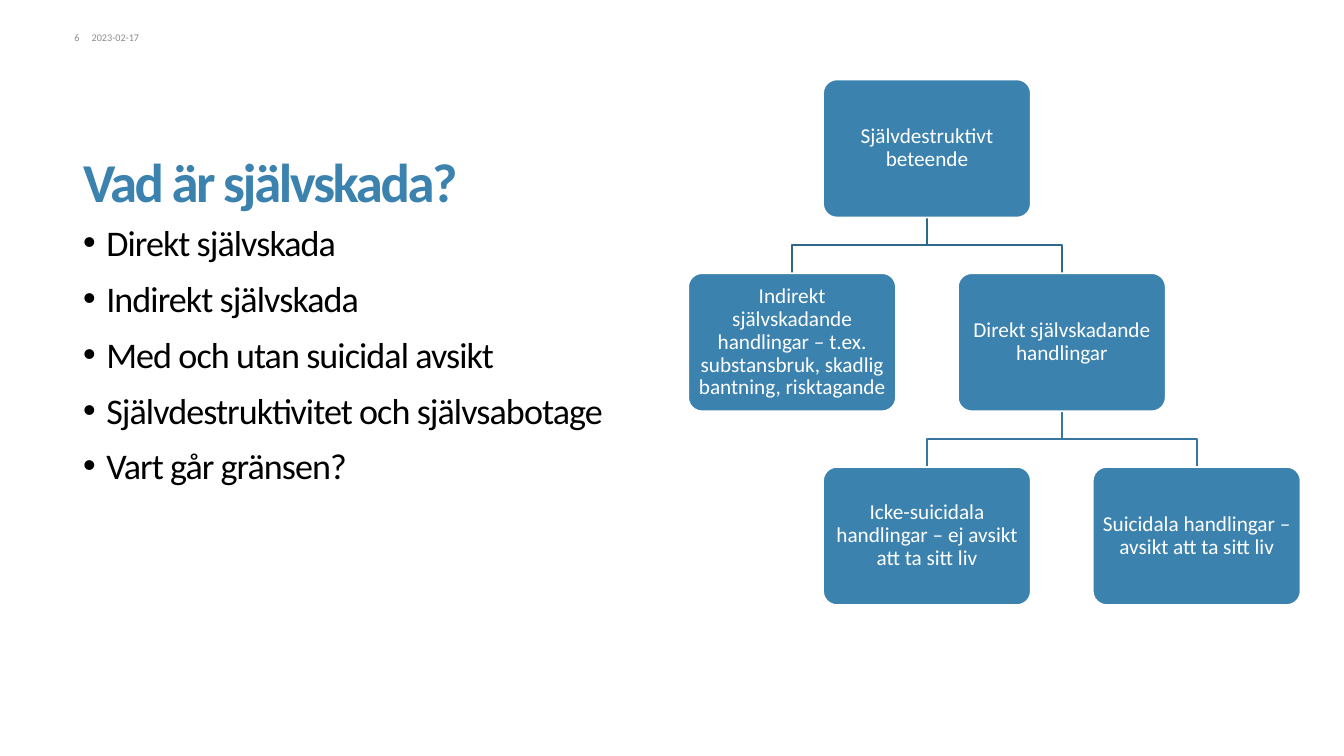
import dataclasses

import lxml.etree
import pptx
import pptx.dml.color
import pptx.enum.shapes
import pptx.enum.text
import pptx.oxml.ns
import pptx.util

Inches = pptx.util.Inches
Pt = pptx.util.Pt
Align = pptx.enum.text.PP_ALIGN
Anchor = pptx.enum.text.MSO_ANCHOR


@dataclasses.dataclass(frozen=True)
class Theme:
    """Colours, font and type sizes of the slide."""
    font: str = "Calibri"
    blue: str = "3C82AF"
    upper_link: str = "30688C"
    lower_link: str = "36769F"
    white: str = "FFFFFF"
    black: str = "000000"
    grey: str = "8C8C8C"
    title_size: float = 64.5
    body_size: float = 42.5
    node_size: float = 25
    meta_size: float = 12


THEME = Theme()
QUESTIONS = [
    "Direkt självskada",
    "Indirekt självskada",
    "Med och utan suicidal avsikt",
    "Självdestruktivitet och självsabotage",
    "Vart går gränsen?",
]
BEHAVIOURS = {
    "root": (1, 0, "Självdestruktivt beteende"),
    "indirect": (0, 1, "Indirekt självskadande handlingar – t.ex. substansbruk, "
                       "skadlig bantning, risktagande"),
    "direct": (2, 1, "Direkt självskadande handlingar"),
    "non_suicidal": (1, 2, "Icke-suicidala handlingar – ej avsikt att ta sitt liv"),
    "suicidal": (3, 2, "Suicidala handlingar – avsikt att ta sitt liv"),
}
LINKS = [
    ("root", "indirect", THEME.upper_link),
    ("root", "direct", THEME.upper_link),
    ("direct", "non_suicidal", THEME.lower_link),
    ("direct", "suicidal", THEME.lower_link),
]


def rgb(colour):
    """Return a colour object for a hex string."""
    return pptx.dml.color.RGBColor.from_string(colour)


def place(shape, box):
    """Move and size a shape to a box given in inches."""
    shape.left, shape.top, shape.width, shape.height = map(Inches, box)


def prepare_frame(frame, anchor, insets=(0, 0, 0, 0), wrap=True):
    """Set anchor, margins and wrapping of a text frame."""
    frame.auto_size = pptx.enum.text.MSO_AUTO_SIZE.NONE
    frame.word_wrap = wrap
    frame.vertical_anchor = anchor
    (frame.margin_left, frame.margin_top,
     frame.margin_right, frame.margin_bottom) = map(Inches, insets)


def format_paragraph(paragraph, size, colour, align=Align.LEFT, line=1.0,
                     after=0, bold=False, tracking=0):
    """Format one paragraph and its runs."""
    paragraph.alignment = align
    paragraph.line_spacing = line
    paragraph.space_before = Pt(0)
    paragraph.space_after = Pt(after)
    for run in paragraph.runs:
        run.font.name = THEME.font
        run.font.size = Pt(size)
        run.font.bold = bold
        run.font.color.rgb = rgb(colour)
        if tracking:
            run.font._element.set("spc", str(round(tracking * 100)))


def add_bullet(paragraph, indent):
    """Give a paragraph a round bullet with a hanging indent."""
    properties = paragraph._p.get_or_add_pPr()
    properties.set("marL", str(Inches(indent)))
    properties.set("indent", str(-Inches(indent)))
    for tag, name, value in (("a:buFont", "typeface", "Arial"), ("a:buChar", "char", "•")):
        lxml.etree.SubElement(properties, pptx.oxml.ns.qn(tag)).set(name, value)


def fill_title(title, box):
    """Write the heading in the title placeholder."""
    place(title, box)
    title.text_frame.text = "Vad är självskada?"
    prepare_frame(title.text_frame, Anchor.BOTTOM, (0, 0, 0, 0.08))
    format_paragraph(title.text_frame.paragraphs[0], THEME.title_size, THEME.blue,
                     line=0.85, bold=True, tracking=-2.8)


def fill_questions(body, box):
    """Write the bullet list in the body placeholder."""
    place(body, box)
    body.text_frame.text = "\n".join(QUESTIONS)
    prepare_frame(body.text_frame, Anchor.TOP)
    for question in body.text_frame.paragraphs:
        add_bullet(question, 0.38)
        format_paragraph(question, THEME.body_size, THEME.black,
                         line=0.84, after=23, tracking=-1.1)


def add_page_info(slide, box):
    """Add the page number and the date side by side."""
    left, top, width, height = box
    number_width, gap = 0.39, 0.2
    date_left = left + number_width + gap
    for text, x, w, align in (
        ("6", left, number_width, Align.RIGHT),
        ("2023-02-17", date_left, left + width - date_left, Align.LEFT),
    ):
        info = slide.shapes.add_textbox(*map(Inches, (x, top, w, height)))
        info.text_frame.text = text
        prepare_frame(info.text_frame, Anchor.TOP, wrap=False)
        format_paragraph(info.text_frame.paragraphs[0], THEME.meta_size, THEME.grey, align)


def add_link(slide, start, end, colour):
    """Draw a right-angled line between two points in inches."""
    middle = (start[1] + end[1]) / 2
    corners = [(start[0], middle), (end[0], middle), end]
    builder = slide.shapes.build_freeform(*map(Inches, start))
    builder.add_line_segments([(Inches(x), Inches(y)) for x, y in corners], close=False)
    link = builder.convert_to_shape()
    link.shadow.inherit = False
    link.fill.background()
    link.line.color.rgb = rgb(colour)
    link.line.width = Pt(2)


def add_behaviour(slide, text, box):
    """Add one rounded box of the tree."""
    behaviour = slide.shapes.add_shape(
        pptx.enum.shapes.MSO_SHAPE.ROUNDED_RECTANGLE, *map(Inches, box))
    behaviour.adjustments[0] = 0.1
    behaviour.shadow.inherit = False
    behaviour.fill.solid()
    behaviour.fill.fore_color.rgb = rgb(THEME.blue)
    behaviour.line.color.rgb = rgb(THEME.white)
    behaviour.line.width = Pt(2)
    behaviour.text_frame.text = text
    prepare_frame(behaviour.text_frame, Anchor.MIDDLE, (0.1,) * 4)
    format_paragraph(behaviour.text_frame.paragraphs[0], THEME.node_size, THEME.white,
                     Align.CENTER, line=0.9)


def add_tree(slide, box):
    """Draw the tree of behaviours on a grid of half-step columns."""
    left, top, width, height = box
    node_width, node_height = 3.4, 2.26
    column_step = (width - node_width) / 3
    row_step = (height - node_height) / 2
    corners = {key: (left + column * column_step, top + row * row_step)
               for key, (column, row, _) in BEHAVIOURS.items()}
    for parent, child, colour in LINKS:
        (parent_x, parent_y), (child_x, child_y) = corners[parent], corners[child]
        add_link(slide, (parent_x + node_width / 2, parent_y + node_height),
                 (child_x + node_width / 2, child_y), colour)
    for key, (_, _, text) in BEHAVIOURS.items():
        add_behaviour(slide, text, (*corners[key], node_width, node_height))


def main():
    """Build the slide and save it."""
    presentation = pptx.Presentation()
    presentation.slide_width, presentation.slide_height = Inches(21.99), Inches(12.37)
    slide = presentation.slides.add_slide(presentation.slide_layouts[1])
    fill_title(slide.shapes.title, (1.36, 1.34, 19.27, 2.23))
    fill_questions(slide.placeholders[1], (1.36, 3.72, 19.27, 6.54))
    add_page_info(slide, (0.91, 0.52, 1.46, 0.2))
    add_tree(slide, (11.26, 1.3, 10.02, 8.6))
    presentation.save("out.pptx")


if __name__ == "__main__":
    main()
